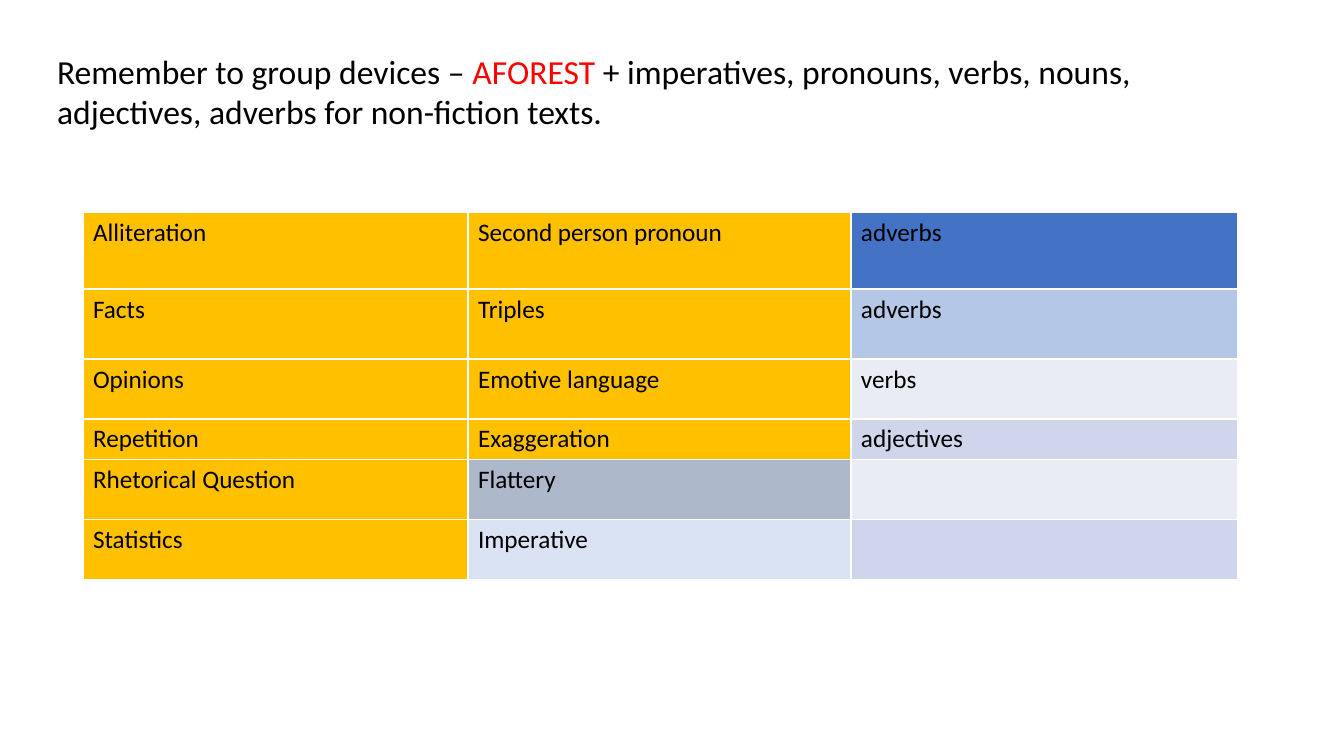
"""Build a slide that groups language devices in a table."""
from lxml.etree import SubElement
from pptx import Presentation
from pptx.dml.color import RGBColor
from pptx.enum.text import MSO_ANCHOR as Anchor, MSO_AUTO_SIZE as Fit, PP_ALIGN as Align
from pptx.oxml.ns import qn
from pptx.util import Emu, Pt

SCALE = 914400 / 100.8
FONT = "Calibri"
BLACK = RGBColor(0x00, 0x00, 0x00)
WHITE = RGBColor(0xFF, 0xFF, 0xFF)
RED = RGBColor(0xFF, 0x00, 0x00)
GOLD = RGBColor(0xFF, 0xC0, 0x00)
BLUE = RGBColor(0x44, 0x72, 0xC4)
SKY = RGBColor(0xB4, 0xC7, 0xE7)
PALE = RGBColor(0xE9, 0xEB, 0xF5)
LILAC = RGBColor(0xCF, 0xD5, 0xEA)
SLATE = RGBColor(0xAD, 0xB9, 0xCA)
ICE = RGBColor(0xDA, 0xE3, 0xF3)

TITLE = [
    ("Remember to group devices – ", BLACK),
    ("AFOREST", RED),
    (" + imperatives, pronouns, verbs, nouns, adjectives, adverbs for non-fiction texts.", BLACK),
]
COLS = [385, 383, 387]
ROWS = [
    (77, [("Alliteration", GOLD), ("Second person pronoun", GOLD), ("adverbs", BLUE)]),
    (70, [("Facts", GOLD), ("Triples", GOLD), ("adverbs", SKY)]),
    (60, [("Opinions", GOLD), ("Emotive language", GOLD), ("verbs", PALE)]),
    (40, [("Repetition", GOLD), ("Exaggeration", GOLD), ("adjectives", LILAC)]),
    (60, [("Rhetorical Question", GOLD), ("Flattery", SLATE), ("", PALE)]),
    (60, [("Statistics", GOLD), ("Imperative", ICE), ("", LILAC)]),
]


def px(count):
    """Turn pixels into EMU."""
    return Emu(round(count * SCALE))


def style(run, size, color):
    """Set the font of a run."""
    run.font.name = FONT
    run.font.size = Pt(size)
    run.font.color.rgb = color


def add_title(slide, parts, left, top, width, height):
    """Place the title and color its parts."""
    title = slide.shapes.title
    title.left, title.top = px(left), px(top)
    title.width, title.height = px(width), px(height)
    frame = title.text_frame
    frame.word_wrap = True
    frame.auto_size = Fit.NONE
    frame.vertical_anchor = Anchor.TOP
    para = frame.paragraphs[0]
    para.alignment = Align.LEFT
    for text, color in parts:
        run = para.add_run()
        run.text = text
        style(run, 24, color)


def add_edges(cell, color, width):
    """Draw a line on each side of a cell."""
    props = cell._tc.get_or_add_tcPr()
    for side in ("a:lnL", "a:lnR", "a:lnT", "a:lnB"):
        line = SubElement(props, qn(side), w=str(Pt(width)))
        fill = SubElement(line, qn("a:solidFill"))
        SubElement(fill, qn("a:srgbClr"), val=str(color))


def fill_cell(cell, text, color):
    """Set the text, edges and fill of a cell."""
    cell.text_frame.text = text
    para = cell.text_frame.paragraphs[0]
    para.font.size = Pt(18)
    for run in para.runs:
        style(run, 18, BLACK)
    add_edges(cell, WHITE, 1)
    cell.fill.solid()
    cell.fill.fore_color.rgb = color


def add_grid(slide, rows, cols, left, top):
    """Add the table of devices."""
    height = sum(size for size, _ in rows)
    frame = slide.shapes.add_table(
        len(rows), len(cols), px(left), px(top), px(sum(cols)), px(height))
    table = frame.table
    table.first_row = table.horz_banding = False
    for col, width in zip(table.columns, cols):
        col.width = px(width)
    for row, (size, items) in zip(table.rows, rows):
        row.height = px(size)
        for cell, (text, color) in zip(row.cells, items):
            fill_cell(cell, text, color)


def main():
    """Build and save the slide."""
    deck = Presentation()
    deck.slide_width, deck.slide_height = px(1344), px(756)
    slide = deck.slides.add_slide(deck.slide_layouts[5])
    add_title(slide, TITLE, 47, 46, 1222, 92)
    add_grid(slide, ROWS, COLS, 83, 212)
    deck.save("out.pptx")


if __name__ == "__main__":
    main()
